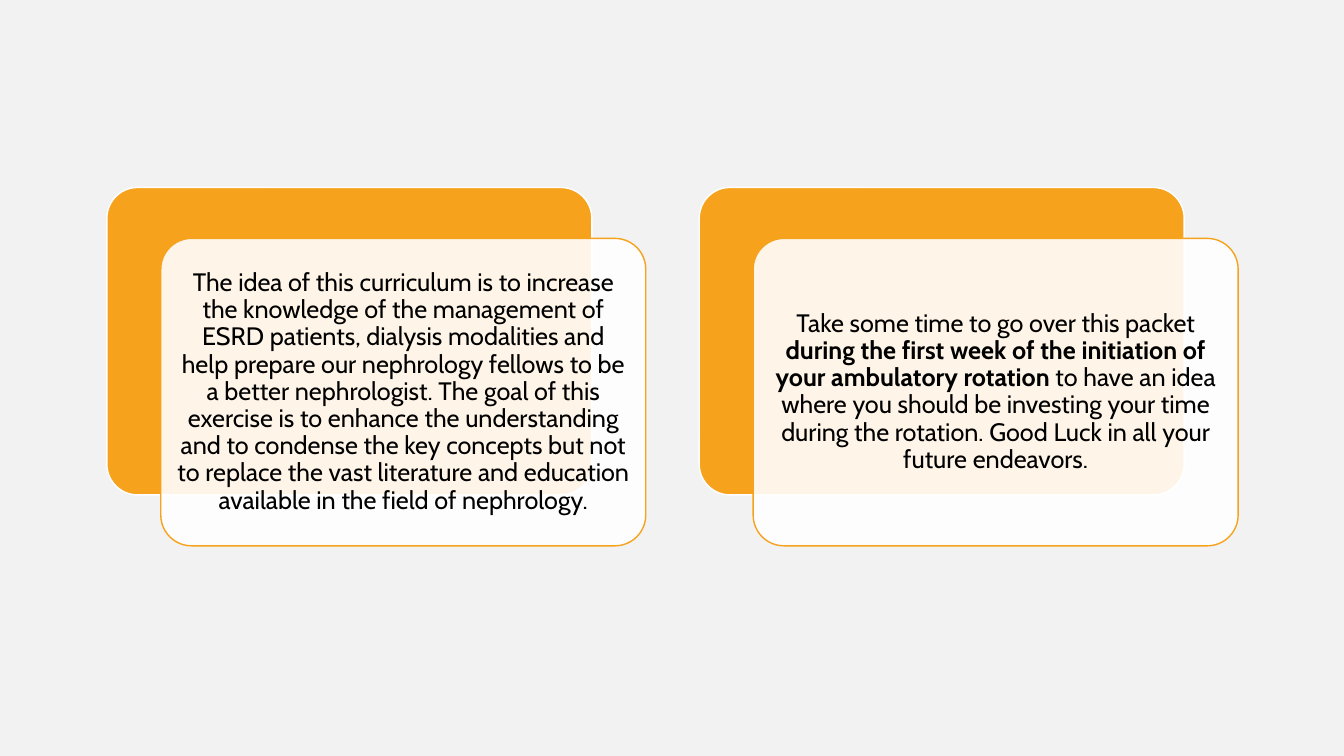
from lxml.etree import SubElement
from pptx import Presentation
from pptx.dml.color import RGBColor
from pptx.enum.shapes import MSO_SHAPE
from pptx.enum.text import MSO_ANCHOR, PP_ALIGN
from pptx.oxml.ns import qn
from pptx.util import Inches, Pt

COLORS = {"page": "F2F2F2", "accent": "F6A21D", "white": "FFFFFF", "text": "000000"}
FONT = "Cabin"

# Grid of cards, in inches
LEFT, TOP = 1.06, 1.86
COLUMN_PITCH = 5.875
CARD_WIDTH, CARD_HEIGHT = 4.81, 3.05
OFFSET_X, OFFSET_Y = 0.535, 0.505

# Each message is a list of (text, bold) runs
MESSAGES = [
    [("The idea of this curriculum is to increase the knowledge of the management of "
      "ESRD patients, dialysis modalities and help prepare our nephrology fellows to be "
      "a better nephrologist. The goal of this exercise is to enhance the understanding "
      "and to condense the key concepts but not to replace the vast literature and "
      "education available in the field of nephrology.", False)],
    [("Take some time to go over this packet ", False),
     ("during the first week of the initiation of your ambulatory rotation ", True),
     ("to have an idea where you should be investing your time during the rotation. "
      "Good Luck in all your future endeavors.", False)],
]


def color(name):
    return RGBColor.from_string(COLORS[name])


def add_panel(page, left, top, fill, line):
    panel = page.shapes.add_shape(
        MSO_SHAPE.ROUNDED_RECTANGLE,
        Inches(left), Inches(top), Inches(CARD_WIDTH), Inches(CARD_HEIGHT))
    panel.adjustments[0] = 0.1
    panel.shadow.inherit = False
    panel.fill.solid()
    panel.fill.fore_color.rgb = color(fill)
    panel.line.color.rgb = color(line)
    panel.line.width = Pt(1)
    return panel


def set_opacity(shape, percent):
    fill_color = shape.fill._xPr.find(qn("a:solidFill")).find(qn("a:srgbClr"))
    SubElement(fill_color, qn("a:alpha")).set("val", str(percent * 1000))


def write_message(shape, message):
    frame = shape.text_frame
    frame.word_wrap = True
    frame.vertical_anchor = MSO_ANCHOR.MIDDLE
    frame.margin_left = frame.margin_right = Inches(0.07)
    frame.margin_top = frame.margin_bottom = Inches(0.07)
    para = frame.paragraphs[0]
    para.alignment = PP_ALIGN.CENTER
    para.line_spacing = 0.9
    for text, bold in message:
        span = para.add_run()
        span.text = text
        span.font.name = FONT
        span.font.size = Pt(18)
        span.font.bold = bold
        span.font.color.rgb = color("text")


def add_card(page, left, top, message):
    # Solid panel behind, translucent panel with the text in front
    add_panel(page, left, top, "accent", "white")
    front = add_panel(page, left + OFFSET_X, top + OFFSET_Y, "white", "accent")
    set_opacity(front, 90)
    write_message(front, message)


def main():
    deck = Presentation()
    deck.slide_width, deck.slide_height = Inches(13.33), Inches(7.5)
    page = deck.slides.add_slide(deck.slide_layouts[6])
    page.background.fill.solid()
    page.background.fill.fore_color.rgb = color("page")
    for column, message in enumerate(MESSAGES):
        add_card(page, LEFT + column * COLUMN_PITCH, TOP, message)
    deck.save("out.pptx")


if __name__ == "__main__":
    main()
